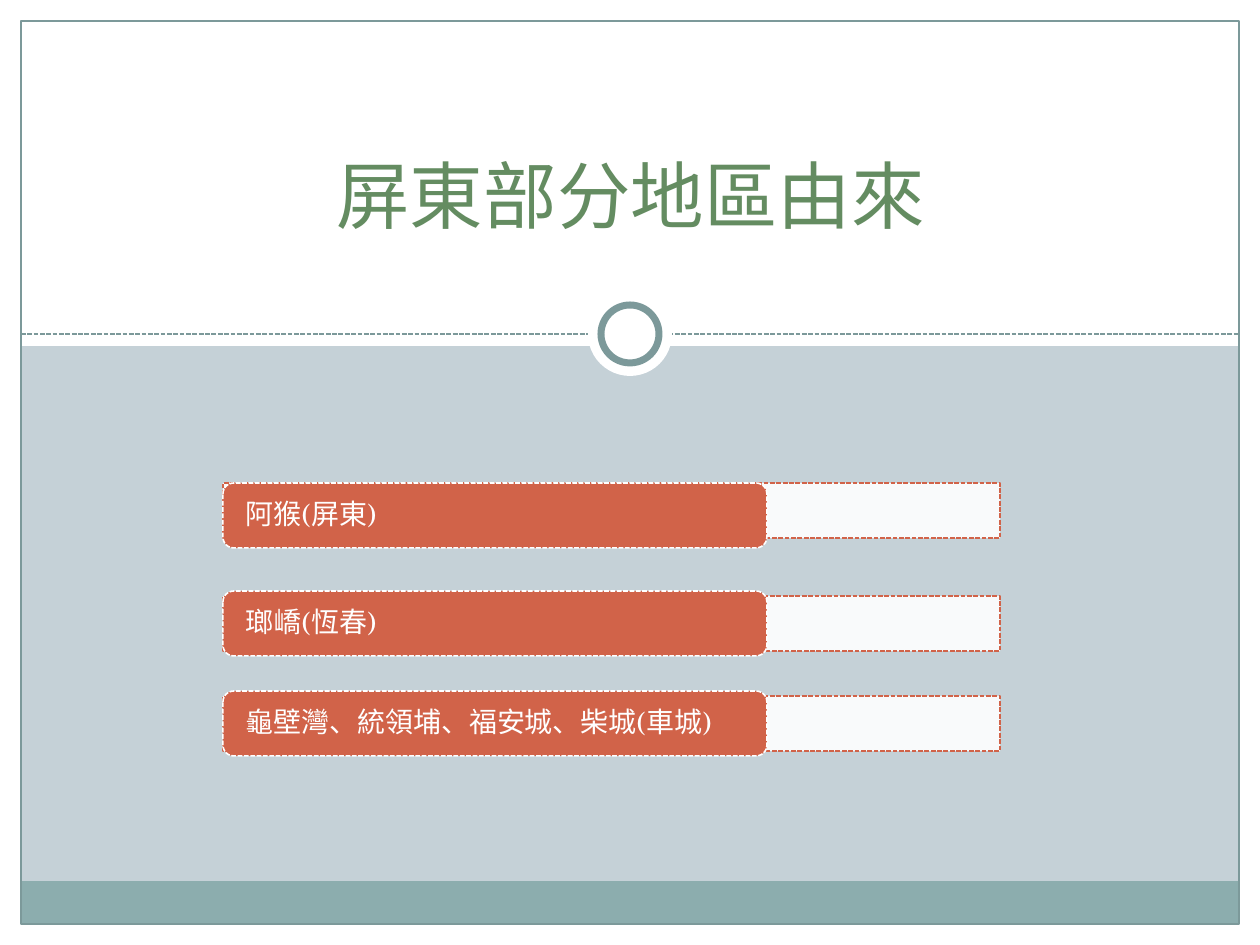
from dataclasses import dataclass
from typing import Any, NamedTuple, Optional

import lxml.etree
import pptx
import pptx.dml.color
import pptx.enum.dml
import pptx.enum.shapes
import pptx.enum.text
import pptx.oxml.ns
import pptx.util

Kind = pptx.enum.shapes.MSO_SHAPE
Align = pptx.enum.text.PP_ALIGN
Anchor = pptx.enum.text.MSO_ANCHOR
SCALE = 914400 / 126


@dataclass(frozen=True)
class Theme:
    back: str = "C5D1D7"
    white: str = "FFFFFF"
    band: str = "8CADAE"
    edge: str = "7C999A"
    title: str = "648C61"
    accent: str = "D16349"
    sans: str = "Noto Sans CJK SC"
    serif: str = "TeX Gyre Schola"
    big: int = 42
    small: int = 16
    thin: float = 0.75
    dash: float = 0.9
    ring: float = 4


class Box(NamedTuple):
    left: int
    top: int
    width: int
    height: int


class Part(NamedTuple):
    box: Box
    kind: Any = Kind.RECTANGLE
    fill: Optional[str] = None
    line: Optional[str] = None
    weight: float = 0
    dashed: bool = False
    alpha: int = 100


class Row(NamedTuple):
    text: str
    bar: int
    tab: int


THEME = Theme()
WIDE, HIGH, RIM = 1260, 945, 21
FRAME = Box(RIM, RIM, WIDE - 2 * RIM, HIGH - 2 * RIM)
MID, RULE = WIDE // 2, 334


def px(count: float) -> pptx.util.Emu:
    return pptx.util.Emu(round(count * SCALE))


def tint(code: str) -> pptx.dml.color.RGBColor:
    return pptx.dml.color.RGBColor.from_string(code)


def child(node: Any, tag: str, **attrs: str) -> Any:
    return lxml.etree.SubElement(node, pptx.oxml.ns.qn(tag), attrs)


def stroke(line: Any, code: str, weight: float, dashed: bool) -> None:
    line.color.rgb = tint(code)
    line.width = pptx.util.Pt(weight)
    if dashed:
        line.dash_style = pptx.enum.dml.MSO_LINE.SQUARE_DOT


def draw(shapes: Any, part: Part) -> None:
    shape = shapes.add_shape(part.kind, *map(px, part.box))
    shape.shadow.inherit = False
    if part.fill:
        shape.fill.solid()
        shape.fill.fore_color.rgb = tint(part.fill)
        if part.alpha < 100:
            color = shape.fill._xPr.find(".//" + pptx.oxml.ns.qn("a:srgbClr"))
            child(color, "a:alpha", val=str(part.alpha * 1000))
    else:
        shape.fill.background()
    if part.line:
        stroke(shape.line, part.line, part.weight, part.dashed)
    else:
        shape.line.fill.background()


def rule(shapes: Any, left: int, right: int, top: int) -> None:
    line = shapes.add_connector(
        pptx.enum.shapes.MSO_CONNECTOR.STRAIGHT, px(left), px(top), px(right), px(top)
    )
    stroke(line.line, THEME.edge, THEME.dash, True)
    child(line._element.spPr, "a:effectLst")


def write(shapes: Any, text: str, *, box: Box, size: int, color: str, font: str,
          align: Any = Align.LEFT, anchor: Any = Anchor.MIDDLE,
          side: int = 0, pad: int = 0, space: float = 1.0) -> None:
    frame = shapes.add_textbox(*map(px, box)).text_frame
    frame.word_wrap = True
    frame.vertical_anchor = anchor
    frame.margin_left = frame.margin_right = px(side)
    frame.margin_top = frame.margin_bottom = px(pad)
    para = frame.paragraphs[0]
    para.alignment = align
    para.line_spacing = space
    run = para.add_run()
    run.text = text
    run.font.size = pptx.util.Pt(size)
    run.font.color.rgb = tint(color)
    run.font.name = font
    child(run.font._element, "a:ea", typeface=THEME.sans)


def disc(size: int, line: Optional[str] = None) -> Part:
    box = Box(MID - size // 2, RULE - size // 2, size, size)
    return Part(box, Kind.OVAL, THEME.white, line, THEME.ring)


def draw_row(shapes: Any, row: Row) -> None:
    left = 223
    draw(shapes, Part(Box(left, row.bar, 777, 55), fill=THEME.white,
                      line=THEME.accent, weight=THEME.dash, dashed=True, alpha=90))
    draw(shapes, Part(Box(left, row.tab, 544, 65), Kind.ROUNDED_RECTANGLE,
                      THEME.accent, THEME.white, THEME.dash, True))
    write(shapes, row.text, box=Box(left + 3, row.tab + 3, 538, 59),
          size=THEME.small, color=THEME.white, font=THEME.serif, side=20, space=0.9)


def main() -> None:
    deck = pptx.Presentation()
    deck.slide_width, deck.slide_height = px(WIDE), px(HIGH)
    slide = deck.slides.add_slide(deck.slide_layouts[6])
    slide.background.fill.solid()
    slide.background.fill.fore_color.rgb = tint(THEME.back)
    shapes = slide.shapes

    rims = (
        Box(0, HIGH - RIM, WIDE, RIM),
        Box(WIDE - RIM, 0, RIM, HIGH),
        Box(0, 0, RIM, HIGH),
        Box(0, 0, WIDE, 346),
    )
    for box in rims:
        draw(shapes, Part(box, fill=THEME.white))
    draw(shapes, Part(Box(RIM, 881, FRAME.width, 43), fill=THEME.band))
    rule(shapes, RIM, WIDE - RIM, RULE)
    draw(shapes, Part(FRAME, line=THEME.edge, weight=THEME.thin))
    draw(shapes, disc(84))
    draw(shapes, disc(58, THEME.edge))

    write(shapes, "屏東部分地區由來", box=Box(95, 53, 1071, 191), size=THEME.big,
          color=THEME.title, font=THEME.sans, align=Align.CENTER,
          anchor=Anchor.BOTTOM, side=13, pad=6)

    rows = (
        Row("阿猴(屏東)", 483, 483),
        Row("瑯嶠(恆春)", 596, 591),
        Row("龜壁灣、統領埔、福安城、柴城(車城)", 696, 691),
    )
    for row in rows:
        draw_row(shapes, row)
    deck.save("out.pptx")


if __name__ == "__main__":
    main()
